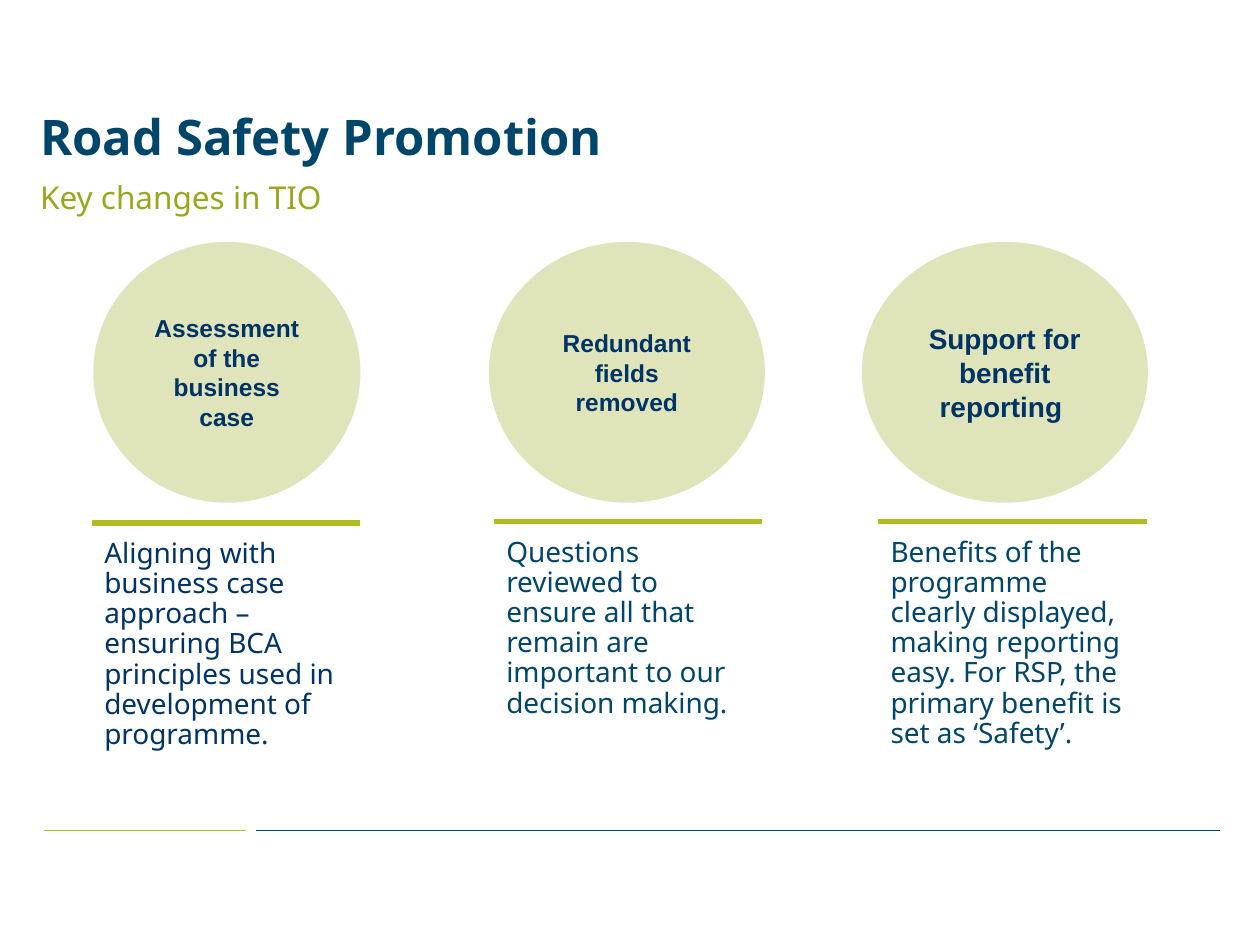
from dataclasses import dataclass
from typing import Any

import pptx
import pptx.dml.color
import pptx.enum.shapes
import pptx.enum.text
import pptx.oxml.ns
import pptx.oxml.xmlchemy
import pptx.util

Inches = pptx.util.Inches
Pt = pptx.util.Pt
Color = pptx.dml.color.RGBColor.from_string
Node = pptx.oxml.xmlchemy.OxmlElement
Align = pptx.enum.text.PP_ALIGN
Anchor = pptx.enum.text.MSO_ANCHOR
Kind = pptx.enum.shapes.MSO_SHAPE


@dataclass(frozen=True)
class Theme:
    navy: str = "00456A"
    ink: str = "003366"
    lime: str = "AFBD21"
    olive: str = "9AA71D"
    sans: str = "Noto Sans"
    arial: str = "Arial"
    title: int = 28
    lead: int = 18
    body: int = 16
    label: int = 14
    alpha: int = 30
    thin: float = 0.75
    thick: float = 3


@dataclass(frozen=True)
class Box:
    left: float
    top: float
    width: float
    height: float

    def spots(self) -> list[int]:
        return [Inches(v) for v in (self.left, self.top, self.width, self.height)]


@dataclass(frozen=True)
class Style:
    font: str
    size: int
    color: str
    bold: bool = False
    align: Any = Align.LEFT
    anchor: Any = Anchor.TOP
    space: float = 0.9


@dataclass(frozen=True)
class Rule:
    left: float
    right: float
    top: float
    color: str
    width: float


@dataclass(frozen=True)
class Topic:
    label: str
    size: int
    oval: Box
    text: str
    color: str
    note: Box


THEME = Theme()
HEAD = Style(THEME.sans, THEME.title, THEME.navy, True, anchor=Anchor.BOTTOM)
LEAD = Style(THEME.sans, THEME.lead, THEME.olive)
BAR = 2.13
RISE = 0.08
FOOT = 6.59

TOPICS = [
    Topic("Assessment of the business case", THEME.label, Box(0.74, 1.92, 2.12, 2.07),
          "Aligning with business case approach – ensuring BCA principles used in "
          "development of programme.", THEME.ink, Box(0.73, 4.23, 2.27, 2.2)),
    Topic("Redundant fields removed", THEME.label, Box(3.88, 1.92, 2.19, 2.07),
          "Questions reviewed to ensure all that remain are important to our "
          "decision making.", THEME.navy, Box(3.92, 4.22, 2.13, 2.2)),
    Topic("Support for benefit reporting ", THEME.body, Box(6.84, 1.92, 2.27, 2.07),
          "Benefits of the programme clearly displayed, making reporting easy. "
          "For RSP, the primary benefit is set as ‘Safety’.",
          THEME.navy, Box(6.97, 4.22, 2.13, 2.2)),
]

RULES = [
    Rule(0.35, 1.95, FOOT, THEME.lime, THEME.thin),
    Rule(2.03, 9.68, FOOT, THEME.navy, THEME.thin),
    *(Rule(t.note.left, t.note.left + BAR, t.note.top - RISE, THEME.lime, THEME.thick)
      for t in TOPICS),
]


def apply(item: Any, values: dict[str, Any]) -> None:
    for name, value in values.items():
        setattr(item, name, value)


def write(shape: Any, text: str, style: Style) -> None:
    frame = shape.text_frame
    frame.text = text
    apply(frame, {"word_wrap": True, "vertical_anchor": style.anchor,
                  "auto_size": pptx.enum.text.MSO_AUTO_SIZE.NONE})
    para = frame.paragraphs[0]
    apply(para, {"alignment": style.align, "line_spacing": style.space,
                 "space_before": Pt(0)})
    font = para.runs[0].font
    apply(font, {"name": style.font, "size": Pt(style.size), "bold": style.bold})
    font.color.rgb = Color(style.color)


def add_text(slide: Any, box: Box, text: str, style: Style) -> None:
    write(slide.shapes.add_textbox(*box.spots()), text, style)


def add_rule(slide: Any, rule: Rule) -> None:
    ends = [Inches(v) for v in (rule.left, rule.top, rule.right, rule.top)]
    line = slide.shapes.add_connector(pptx.enum.shapes.MSO_CONNECTOR.STRAIGHT, *ends)
    line.line.color.rgb = Color(rule.color)
    line.line.width = Pt(rule.width)
    line._element.spPr.append(Node("a:effectLst"))


def add_oval(slide: Any, topic: Topic) -> None:
    oval = slide.shapes.add_shape(Kind.OVAL, *topic.oval.spots())
    oval.shadow.inherit = False
    oval.fill.solid()
    oval.fill.fore_color.rgb = Color(THEME.olive)
    oval.line.fill.background()
    tint = oval._element.spPr.find(".//" + pptx.oxml.ns.qn("a:srgbClr"))
    alpha = Node("a:alpha")
    alpha.set("val", str(THEME.alpha * 1000))
    tint.append(alpha)
    write(oval, topic.label, Style(THEME.arial, topic.size, THEME.ink, True,
                                   Align.CENTER, Anchor.MIDDLE, 1.0))


def main() -> None:
    deck = pptx.Presentation()
    apply(deck, {"slide_width": Inches(10), "slide_height": Inches(7.5)})
    slide = deck.slides.add_slide(deck.slide_layouts[5])
    title = slide.shapes.title
    spots = Box(0.22, 0.68, 9.44, 0.69).spots()
    apply(title, dict(zip(("left", "top", "width", "height"), spots)))
    write(title, "Road Safety Promotion", HEAD)
    add_text(slide, Box(0.22, 1.4, 9.44, 0.39), "Key changes in TIO", LEAD)
    for rule in RULES:
        add_rule(slide, rule)
    for topic in TOPICS:
        add_oval(slide, topic)
        add_text(slide, topic.note, topic.text,
                 Style(THEME.sans, THEME.body, topic.color))
    deck.save("out.pptx")


if __name__ == "__main__":
    main()
